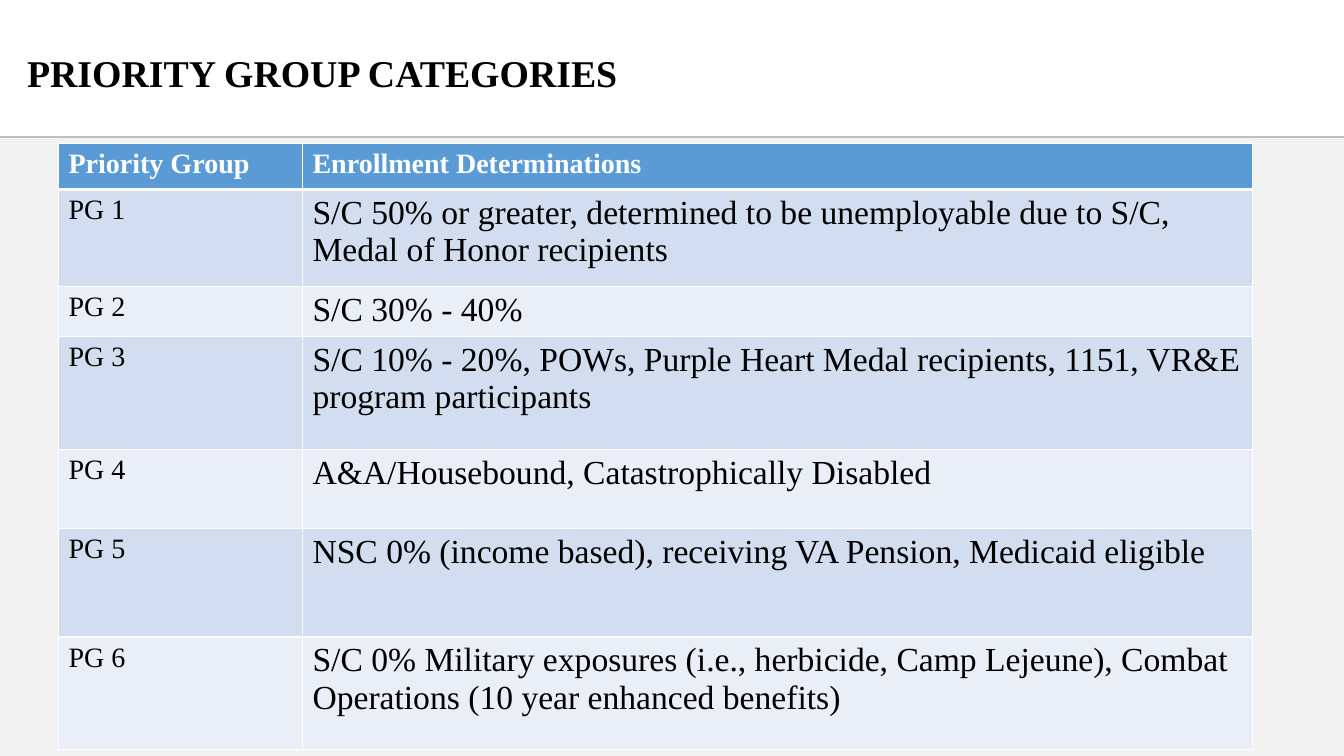
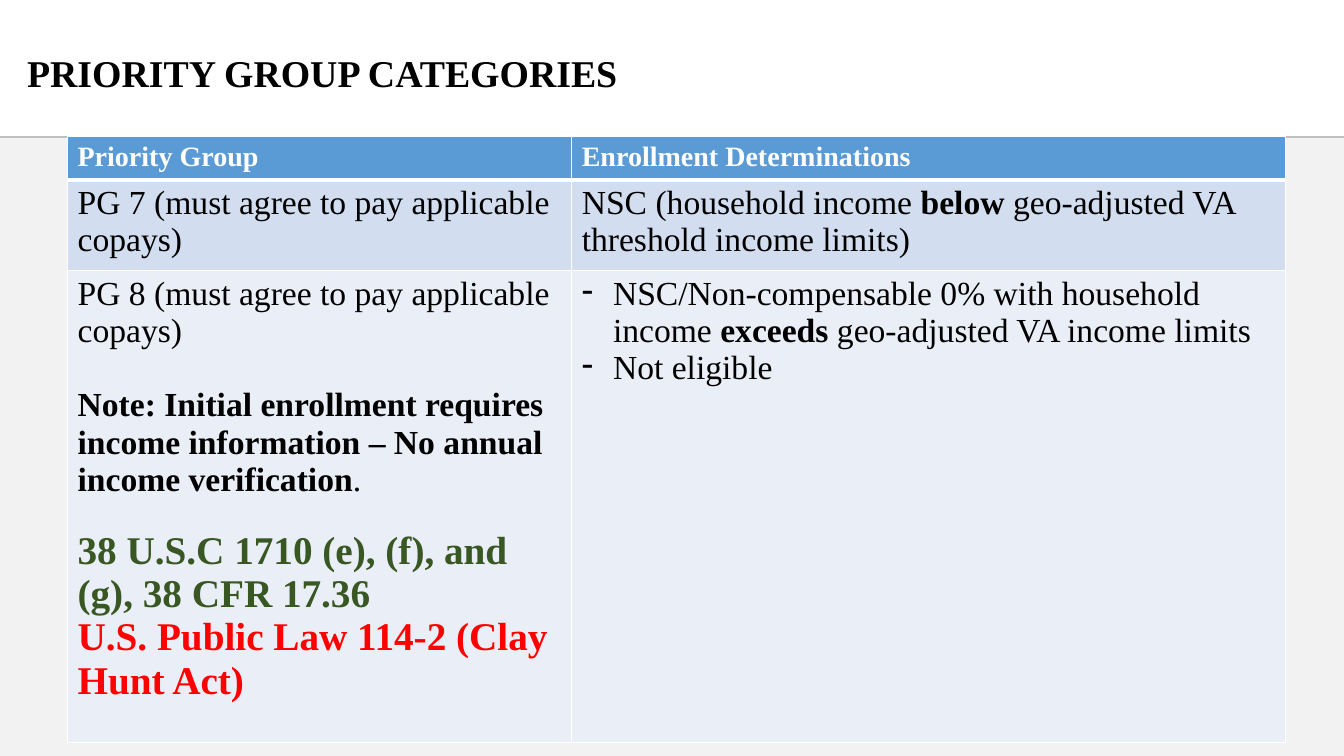
import dataclasses
import pptx
import pptx.dml.color
import pptx.enum.shapes
import pptx.enum.text
import pptx.oxml
import pptx.oxml.ns
import pptx.util
import lxml.etree

Inches = pptx.util.Inches
Pt = pptx.util.Pt
qn = pptx.oxml.ns.qn


@dataclasses.dataclass(frozen=True)
class Theme:
    font: str = "Times New Roman"
    black: str = "000000"
    white: str = "FFFFFF"
    panel: str = "F2F2F2"
    rule: str = "BFBFBF"
    head: str = "5B9BD5"
    bands: tuple = ("D2DEEF", "EAEFF7")
    green: str = "385723"
    red: str = "FF0000"
    title: float = 27
    label: float = 20
    body: float = 24
    cite: float = 28


THEME = Theme()


@dataclasses.dataclass(frozen=True)
class Para:
    text: str
    size: float = THEME.body
    color: str = THEME.black
    bold: bool = False
    gap: float = 0
    dash: bool = False


TITLE = "PRIORITY GROUP CATEGORIES"
HEADS = ("Priority Group", "Enrollment Determinations")

FIRST = [
    "S/C 50% or greater, determined to be unemployable due to S/C, Medal of Honor recipients",
    "S/C 30% - 40%",
    "S/C 10% - 20%, POWs, Purple Heart Medal recipients, 1151, VR&E program participants",
    "A&A/Housebound, Catastrophically Disabled",
    "NSC 0% (income based), receiving VA Pension, Medicaid eligible",
    "S/C 0% Military exposures (i.e., herbicide, Camp Lejeune), Combat Operations (10 year enhanced benefits)",
]

LAST = [
    (
        [Para("PG 7 (must agree to pay applicable copays)")],
        [Para("NSC (household income *below* geo-adjusted VA threshold income limits)")],
    ),
    (
        [
            Para("PG 8 (must agree to pay applicable copays)"),
            Para("*Note: Initial enrollment requires income information – "
                 "No annual income verification*.", gap=26.5),
            Para("38 U.S.C 1710 (e), (f), and (g), 38 CFR 17.36",
                 THEME.cite, THEME.green, True, gap=22),
            Para("U.S. Public Law 114-2 (Clay Hunt Act)", THEME.cite, THEME.red, True),
        ],
        [
            Para("NSC/Non-compensable 0% with household income *exceeds* "
                 "geo-adjusted VA income limits", dash=True),
            Para("Not eligible", dash=True),
        ],
    ),
]


def rgb(color):
    return pptx.dml.color.RGBColor.from_string(color)


def add_dash(line):
    props = line._p.get_or_add_pPr()
    props.set("marL", str(Inches(0.31)))
    props.set("indent", str(-Inches(0.31)))
    lxml.etree.SubElement(props, qn("a:buChar")).set("char", "-")


def write(frame, paras):
    for index, para in enumerate(paras):
        line = frame.add_paragraph() if index else frame.paragraphs[0]
        if para.dash:
            add_dash(line)
        if para.gap:
            line.space_before = Pt(para.gap)
        font = line.font
        font.name, font.size = THEME.font, Pt(para.size)
        font.color.rgb = rgb(para.color)
        parts = para.text.split("*")
        if len(parts) == 1:
            font.bold = para.bold
        for place, part in enumerate(parts):
            if part:
                run = line.add_run()
                run.text = part
                if len(parts) > 1:
                    run.font.bold = place % 2 == 1


def add_edge(cell, side, width):
    props = cell._tc.get_or_add_tcPr()
    edge = lxml.etree.SubElement(props, qn("a:ln" + side), w=str(Pt(width)))
    fill = lxml.etree.SubElement(edge, qn("a:solidFill"))
    lxml.etree.SubElement(fill, qn("a:srgbClr")).set("val", THEME.white)


def fill_cell(cell, paras, color, base, top):
    for side, width in zip("LRTB", (1, 1, top, base)):
        add_edge(cell, side, width)
    cell.fill.solid()
    cell.fill.fore_color.rgb = rgb(color)
    write(cell.text_frame, paras)


def add_grid(slide, left, top, widths, heights, rows):
    heads = [[Para(text, THEME.label, THEME.white, True)] for text in HEADS]
    rows = [heads, *rows]
    grid = slide.shapes.add_table(
        len(rows), len(widths), Inches(left), Inches(top),
        Inches(sum(widths)), Inches(sum(heights))).table
    for col, width in zip(grid.columns, widths):
        col.width = Inches(width)
    for index, (row, height) in enumerate(zip(grid.rows, heights)):
        row.height = Inches(height)
        color = THEME.bands[(index - 1) % 2] if index else THEME.head
        base, top_edge = (1 if index else 3), (3 if index == 1 else 1)
        for cell, paras in zip(row.cells, rows[index]):
            fill_cell(cell, paras, color, base, top_edge)


def add_panel(slide):
    panel = slide.shapes.add_shape(
        pptx.enum.shapes.MSO_SHAPE.RECTANGLE,
        Inches(0), Inches(1.37), Inches(13.33), Inches(6.13))
    panel.shadow.inherit = False
    panel.fill.solid()
    panel.fill.fore_color.rgb = rgb(THEME.panel)
    panel.line.fill.background()


def add_rule(slide):
    rule = slide.shapes.add_connector(
        pptx.enum.shapes.MSO_CONNECTOR.STRAIGHT,
        Inches(0), Inches(1.36), Inches(13.33), Inches(1.36))
    rule.line.color.rgb = rgb(THEME.rule)
    rule.line.width = Pt(1.5)
    lxml.etree.SubElement(rule._element.spPr, qn("a:effectLst"))


def add_title(slide):
    box = slide.shapes.add_textbox(Inches(0.17), Inches(0.33), Inches(9), Inches(0.83))
    frame = box.text_frame
    frame.word_wrap = True
    frame.vertical_anchor = pptx.enum.text.MSO_ANCHOR.MIDDLE
    write(frame, [Para(TITLE, THEME.title, bold=True)])
    frame.paragraphs[0].line_spacing = 0.9


def add_slide(deck):
    slide = deck.slides.add_slide(deck.slide_layouts[6])
    add_panel(slide)
    add_rule(slide)
    add_title(slide)
    return slide


def main():
    deck = pptx.Presentation()
    deck.slide_width, deck.slide_height = Inches(13.33), Inches(7.5)
    first = [
        ([Para(f"PG {number}", THEME.label)], [Para(text)])
        for number, text in enumerate(FIRST, 1)
    ]
    add_grid(add_slide(deck), 0.58, 1.42, (2.42, 9.42),
             (0.46, 0.96, 0.47, 1.12, 0.78, 1.08, 1.12), first)
    add_grid(add_slide(deck), 0.67, 1.35, (5, 7.08), (0.41, 0.83, 4.68), LAST)
    deck.save("out.pptx")


if __name__ == "__main__":
    main()
